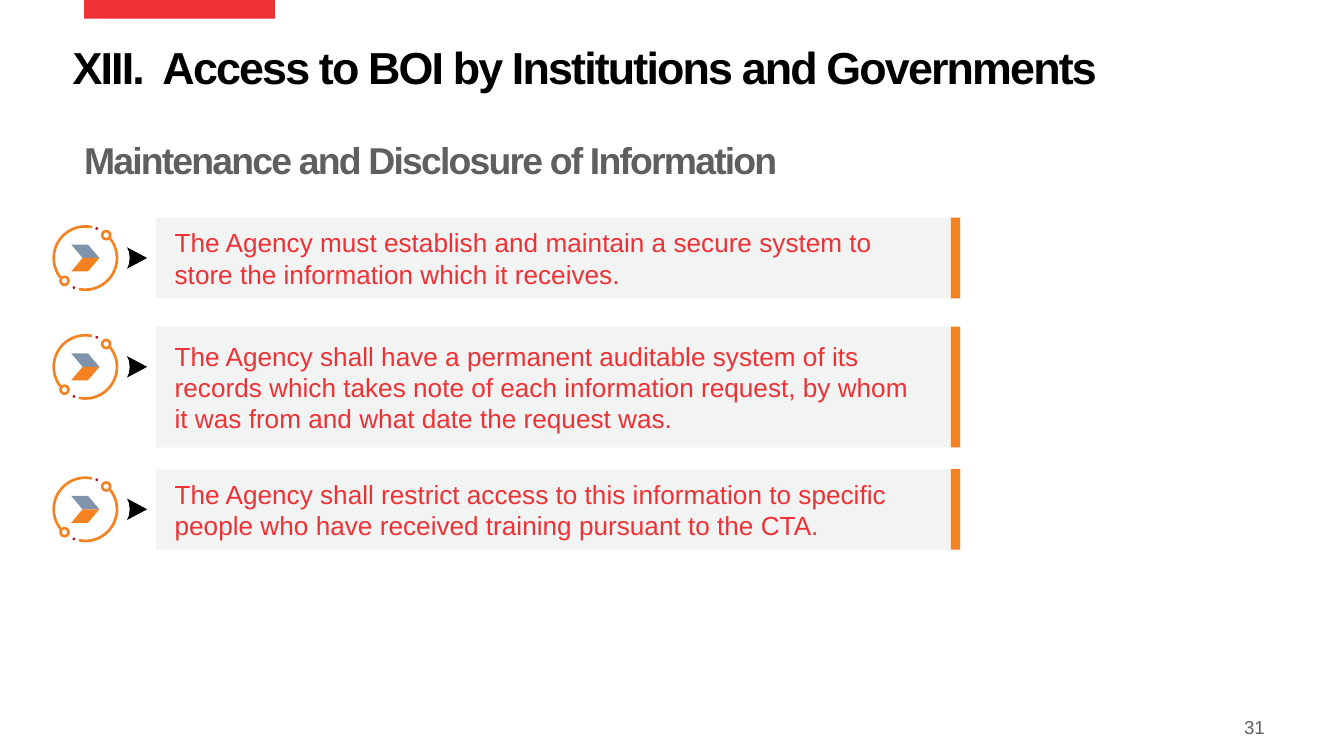
from dataclasses import dataclass

from pptx import Presentation
from pptx import util as u
from pptx.dml.color import RGBColor
from pptx.enum import shapes, text

PX = u.Inches(1) // 200  # one px is 1/200 inch
FONT = "Arial"
COLORS = {
    "red": "EE3135",
    "orange": "F58220",
    "steel": "7F93AA",
    "crimson": "AE132A",
    "panel": "F2F3F3",
    "gray": "5F5F5F",
    "black": "000000",
    "white": "FFFFFF",
}
KIND = shapes.MSO_SHAPE
ICON_X = 127
DEGREE = 0.6  # adjustment value of one degree
Point = tuple[int, int]


@dataclass
class Card:
    text: str
    top: int
    height: int


CARDS = [
    Card("The Agency must establish and maintain a secure system to store "
         "the information which it receives.", 324, 120),
    Card("The Agency shall have a permanent auditable system of its records "
         "which takes note of each information request, by whom it was from "
         "and what date the request was.", 486, 180),
    Card("The Agency shall restrict access to this information to specific "
         "people who have received training pursuant to the CTA.", 698, 120),
]


def paint(shape, color: str) -> None:
    shape.shadow.inherit = False
    shape.fill.solid()
    shape.fill.fore_color.rgb = RGBColor.from_string(COLORS[color])
    shape.line.fill.background()


def add_preset(parent, kind, left: int, top: int, width: int, height: int,
               color: str, adjustments: tuple[float, ...] = ()):
    shape = parent.add_shape(kind, left * PX, top * PX, width * PX, height * PX)
    for index, value in enumerate(adjustments):
        shape.adjustments[index] = value
    paint(shape, color)
    return shape


def add_round(parent, kind, center: Point, radius: int, color: str,
              adjustments: tuple[float, ...] = ()):
    return add_preset(parent, kind, center[0] - radius, center[1] - radius,
                      2 * radius, 2 * radius, color, adjustments)


def add_outline(parent, offsets: list[Point], center: Point, color: str) -> None:
    """Draw a closed polygon given as px offsets from a center."""
    points = [((center[0] + x) * PX, (center[1] + y) * PX) for x, y in offsets]
    builder = parent.build_freeform(*points[0], scale=1.0)
    builder.add_line_segments(points[1:], close=True)
    paint(builder.convert_to_shape(), color)


def write(shape, content: str, *, size: int, color: str, bold: bool = False,
          align=text.PP_ALIGN.LEFT, anchor=text.MSO_ANCHOR.TOP,
          margins: tuple[int, int, int, int] = (0, 0, 0, 0), indent: int = 0,
          line_spacing: float = 1.0, tracking: int = 0) -> None:
    frame = shape.text_frame
    frame.word_wrap = True
    frame.auto_size = text.MSO_AUTO_SIZE.NONE
    frame.vertical_anchor = anchor
    (frame.margin_left, frame.margin_top,
     frame.margin_right, frame.margin_bottom) = [m * PX for m in margins]
    paragraph = frame.paragraphs[0]
    paragraph.alignment = align
    paragraph.line_spacing = line_spacing
    properties = paragraph._p.get_or_add_pPr()
    properties.set("marL", str(indent * PX))
    properties.set("indent", "0")
    run = paragraph.add_run()
    run.text = content
    run.font.name = FONT
    run.font.size = u.Pt(size)
    run.font.bold = bold
    run.font.color.rgb = RGBColor.from_string(COLORS[color])
    if tracking:
        run._r.get_or_add_rPr().set("spc", str(tracking))


def add_icon(parent, center: Point) -> None:
    x, y = center
    disc = add_round(parent, KIND.OVAL, center, 60, "white")
    disc.line.color.rgb = RGBColor.from_string(COLORS["white"])
    disc.line.width = u.Pt(1)
    # Two half orbits, each starting at a ring and ending near a dot
    for sign, start, end in ((1, 142, 282), (-1, 322, 102)):
        add_round(parent, KIND.BLOCK_ARC, center, 49, "orange",
                  (start * DEGREE, end * DEGREE, 0.04))
        add_round(parent, KIND.DONUT, (x - sign * 31, y + sign * 34), 8,
                  "orange", (0.25,))
        add_round(parent, KIND.OVAL, (x + sign * 17, y - sign * 44), 2, "crimson")
    # Two mirrored halves of the chevron
    for sign, color in ((-1, "steel"), (1, "orange")):
        half = [(-21, sign * 20), (4, sign * 20), (21, 0), (-4, 0)]
        add_outline(parent, half, center, color)


def add_card(slide, card: Card) -> None:
    parent = slide.shapes.add_group_shape().shapes
    center = (ICON_X, card.top + 60)
    add_icon(parent, center)
    panel = add_preset(parent, KIND.RECTANGLE, 232, card.top, 1198, card.height,
                       "panel")
    write(panel, card.text, size=14, color="red", indent=22,
          anchor=text.MSO_ANCHOR.MIDDLE, margins=(6, 6, 60, 6))
    add_preset(parent, KIND.RECTANGLE, 1415, card.top, 14, card.height, "orange")
    pointer = [(62, -16), (65, -9), (66, 0), (65, 9), (62, 16), (92, 0)]
    add_outline(parent, pointer, center, "black")


def add_label(slide, left: int, top: int, width: int, height: int,
              content: str, **style) -> None:
    box = slide.shapes.add_textbox(left * PX, top * PX, width * PX, height * PX)
    write(box, content, **style)


def main() -> None:
    presentation = Presentation()
    presentation.slide_width, presentation.slide_height = 2000 * PX, 1125 * PX
    slide = presentation.slides.add_slide(presentation.slide_layouts[5])

    # Accent bar and subtitle
    add_preset(slide.shapes, KIND.RECTANGLE, 125, 0, 284, 28, "red")
    title = slide.shapes.title
    title.left, title.top = 125 * PX, 212 * PX
    title.width, title.height = 1758 * PX, 100 * PX
    heading = dict(bold=True, line_spacing=0.9, tracking=-100)
    write(title, "Maintenance and Disclosure of Information",
          size=20, color="gray", **heading)

    # Page number
    add_label(slide, 1704, 1060, 178, 44, "31", size=10, color="gray",
              align=text.PP_ALIGN.RIGHT, anchor=text.MSO_ANCHOR.MIDDLE)

    # Cards
    for card in CARDS:
        add_card(slide, card)

    # Section heading
    add_label(slide, 108, 68, 1758, 100,
              "XIII.  Access to BOI by Institutions and Governments",
              size=24, color="black", **heading)

    presentation.save("out.pptx")


if __name__ == "__main__":
    main()
